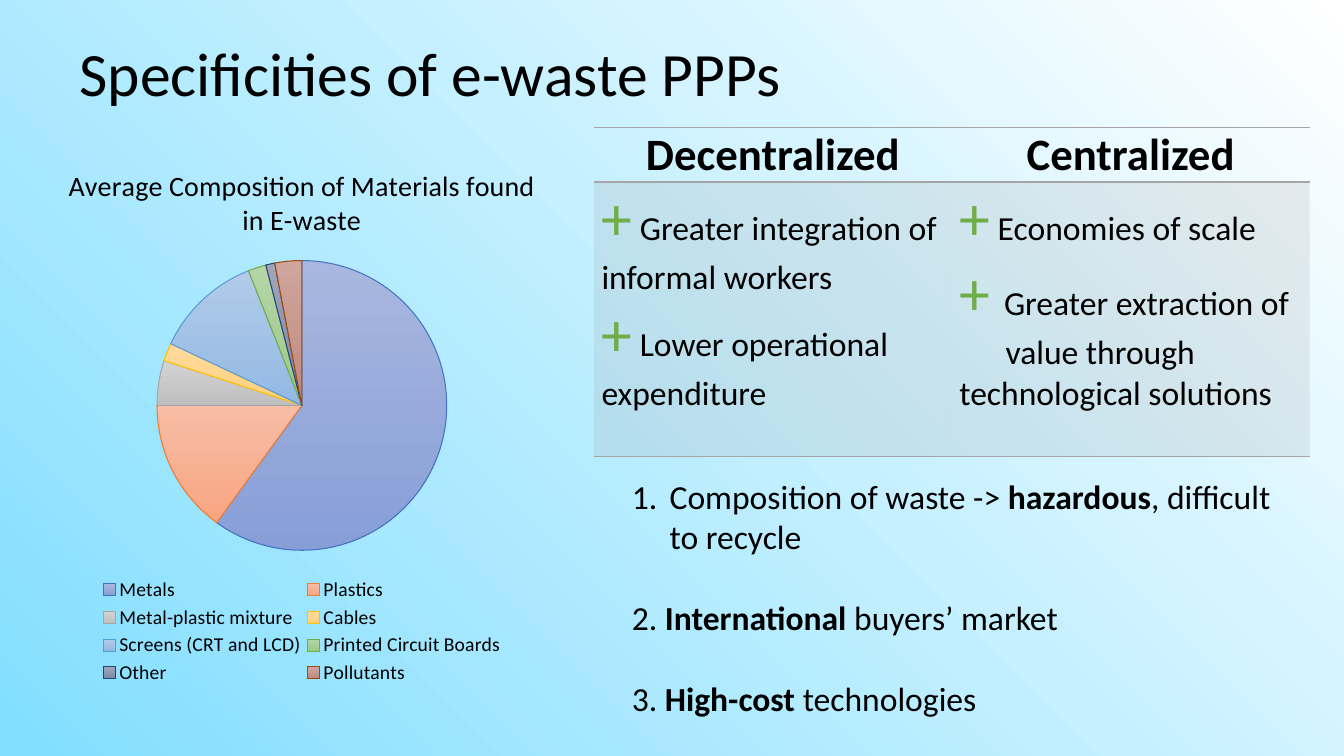
from lxml import etree
from pptx import Presentation
from pptx import util as u
from pptx.chart.data import CategoryChartData
from pptx.dml.color import RGBColor
from pptx.enum import chart as charts, text
from pptx.oxml import ns

Pt = u.Pt
FONT = "Calibri"
BLACK = RGBColor(0x00, 0x00, 0x00)
WHITE = RGBColor(0xFF, 0xFF, 0xFF)
SKY = RGBColor(0x81, 0xDE, 0xFF)
GREEN = RGBColor(0x70, 0xAD, 0x47)
GRAY = RGBColor(0xA5, 0xA5, 0xA5)
PLAIN_TABLE = "{2D5ABB26-0587-4C30-8999-92F81FD0307C}"

CHART_TITLE = "Average Composition of Materials found in E-waste"
MATERIALS = [
    ("Metals", 60, "A8B7DF", "889ED7", "4472C4"),
    ("Plastics", 15, "F7BDA5", "F8A582", "ED7D31"),
    ("Metal-plastic mixture", 5, "D2D2D2", "C0C0C0", "A5A5A5"),
    ("Cables", 2, "FFDB9E", "FFD07C", "FFC000"),
    ("Screens (CRT and LCD)", 12, "B1CBE9", "93B9E4", "5B9BD5"),
    ("Printed Circuit Boards", 2, "B5D5A7", "9CC987", "70AD47"),
    ("Other", 1, "9FA5BA", "7E87A4", "264478"),
    ("Pollutants", 3, "CFA69E", "C0887C", "9E480E"),
]
MODELS = [
    ("Decentralized", [
        ("+", [" Greater integration of informal workers"]),
        ("+", [" Lower operational expenditure"]),
    ]),
    ("Centralized", [
        ("+", [" Economies of scale"]),
        ("+ ", ["Greater extraction of", "\tvalue through technological solutions"]),
    ]),
]
POINTS = [
    ("Composition of waste -> ", "hazardous", ", difficult to recycle"),
    ("2. ", "International", " buyers’ market"),
    ("3. ", "High-cost", " technologies"),
]


def add_child(parent, tag, **attributes):
    """Append an XML element with a prefixed tag and return it."""
    return etree.SubElement(parent, ns.qn(tag), attributes)


def set_font(font, size, color=BLACK, bold=None):
    """Set face, size, colour and weight of a font."""
    font.name, font.size, font.bold = FONT, Pt(size), bold
    font.color.rgb = color


def add_span(para, words, size, color=BLACK):
    """Add a run with its own size and colour."""
    span = para.add_run()
    span.text = words
    set_font(span.font, size, color)


def set_gradient(fill, start, end):
    """Fill with a two-colour gradient running downwards."""
    fill.gradient()
    fill.gradient_angle = 270
    for stop, color in zip(fill.gradient_stops, (start, end)):
        stop.color.rgb = color


def paint_background(page):
    """Spread a round gradient from the top right corner."""
    set_gradient(page.background.fill, WHITE, SKY)
    gradient = next(page.element.iter(ns.qn("a:gradFill")))
    gradient.remove(gradient.find(ns.qn("a:lin")))
    circle = add_child(gradient, "a:path", path="circle")
    add_child(circle, "a:fillToRect", l="100000", b="100000")


def add_box(page, left, top, width, height):
    """Add a wrapping text box and return its frame."""
    frame = page.shapes.add_textbox(Pt(left), Pt(top), Pt(width), Pt(height)).text_frame
    frame.word_wrap = True
    return frame


def add_title(page):
    """Add the slide title."""
    frame = add_box(page, 49.7, 2.2, 828, 104.4)
    frame.vertical_anchor = text.MSO_ANCHOR.MIDDLE
    para = frame.paragraphs[0]
    para.text = "Specificities of e-waste PPPs"
    para.line_spacing = 0.9
    set_font(para.font, 44)


def set_layout(element, **fractions):
    """Place a chart part by fractions of the chart area."""
    for old in element.findall(ns.qn("c:layout")):
        element.remove(old)
    layout = etree.Element(ns.qn("c:layout"))
    manual = add_child(layout, "c:manualLayout")
    if element.tag == ns.qn("c:plotArea"):
        add_child(manual, "c:layoutTarget", val="inner")
        element.insert(0, layout)
    else:
        element.find(ns.qn("c:legendPos")).addnext(layout)
    for axis in "xy":
        add_child(manual, f"c:{axis}Mode", val="edge")
    for name, value in fractions.items():
        add_child(manual, f"c:{name}", val=str(value))


def add_pie(page):
    """Add the pie chart of materials."""
    data = CategoryChartData()
    data.categories = [material[0] for material in MATERIALS]
    data.add_series(CHART_TITLE, [material[1] for material in MATERIALS])
    pie = page.shapes.add_chart(
        charts.XL_CHART_TYPE.PIE, Pt(0), Pt(103), Pt(431.3), Pt(388.8), data).chart
    set_font(pie.font, 10)
    pie.has_title = True
    heading = pie.chart_title.text_frame.paragraphs[0]
    add_span(heading, CHART_TITLE, 20)
    set_font(heading.font, 20, bold=False)
    heading.runs[0].font.bold = False
    pie.has_legend = True
    pie.legend.position = charts.XL_LEGEND_POSITION.BOTTOM
    pie.legend.include_in_layout = False
    set_font(pie.legend.font, 14)
    plot = pie.plots[0]
    plot.vary_by_categories = True
    for index, (_, _, start, end, edge) in enumerate(MATERIALS):
        style = plot.series[0].points[index].format
        set_gradient(style.fill, RGBColor.from_string(start), RGBColor.from_string(end))
        style.line.color.rgb = RGBColor.from_string(edge)
        style.line.width = Pt(0.75)
    area = next(pie.element.iter(ns.qn("c:plotArea")))
    set_layout(area, x=0.26, y=0.21, w=0.48, h=0.54)
    set_layout(pie.legend.element if hasattr(pie.legend, "element") else pie.legend._element,
               x=0.16, y=0.79, w=0.68, h=0.21)


def add_border(cell, side):
    """Draw a thin gray line on one side of a cell."""
    line = add_child(cell._tc.get_or_add_tcPr(), f"a:{side}", w=str(Pt(1)))
    fill = add_child(line, "a:solidFill")
    add_child(fill, "a:srgbClr", val=str(GRAY))


def format_cell(cell, sides):
    """Set the margins and borders of a cell."""
    cell.margin_left = cell.margin_right = Pt(5.4)
    cell.margin_top = cell.margin_bottom = 0
    for side in sides:
        add_border(cell, side)


def add_benefits(cell, benefits):
    """List benefits behind large green plus signs."""
    frame = cell.text_frame
    for index, (sign, lines) in enumerate(benefits):
        para = frame.add_paragraph() if index else frame.paragraphs[0]
        add_span(para, sign, 44, GREEN)
        for number, line in enumerate(lines):
            if number:
                para.add_line_break()
                tabs = add_child(para._p.get_or_add_pPr(), "a:tabLst")
                add_child(tabs, "a:tab", pos=str(Pt(33)), algn="l")
            add_span(para, line, 24)


def add_models(page):
    """Add the table comparing the two models."""
    frame = page.shapes.add_table(2, len(MODELS), Pt(424.3), Pt(91), Pt(511.2), Pt(235))
    table = frame.table
    table.first_row = table.horz_banding = False
    next(table._tbl.iter(ns.qn("a:tableStyleId"))).text = PLAIN_TABLE
    table.rows[0].height, table.rows[1].height = Pt(39), Pt(196)
    for column, (name, benefits) in enumerate(MODELS):
        header, body = table.cell(0, column), table.cell(1, column)
        format_cell(header, ("lnT", "lnB"))
        header.fill.background()
        para = header.text_frame.paragraphs[0]
        para.text, para.alignment = name, text.PP_ALIGN.CENTER
        set_font(para.font, 32, bold=True)
        format_cell(body, ("lnT", "lnB"))
        body.fill.solid()
        body.fill.fore_color.rgb = GRAY
        color = body._tc.tcPr.find(ns.qn("a:solidFill"))[0]
        add_child(color, "a:alpha", val="20000")
        add_benefits(body, benefits)


def add_points(page):
    """Add the numbered points with their key words in bold."""
    frame = add_box(page, 444.2, 336.2, 481.7, 181.4)
    for index, parts in enumerate(POINTS):
        para = frame.add_paragraph() if index else frame.paragraphs[0]
        set_font(para.font, 24)
        for position, words in enumerate(parts):
            span = para.add_run()
            span.text = words
            span.font.bold = position == 1
        if index:
            para.space_before = Pt(29)
    properties = frame.paragraphs[0]._p.get_or_add_pPr()
    properties.set("marL", str(Pt(27)))
    properties.set("indent", str(Pt(-27)))
    numbering = etree.Element(ns.qn("a:buAutoNum"), type="arabicPeriod")
    properties.insert(0, numbering)


def main():
    """Build the slide and save it."""
    deck = Presentation()
    deck.slide_width, deck.slide_height = Pt(960), Pt(540)
    page = deck.slides.add_slide(deck.slide_layouts[6])
    paint_background(page)
    add_title(page)
    add_pie(page)
    add_models(page)
    add_points(page)
    deck.save("out.pptx")


if __name__ == "__main__":
    main()
